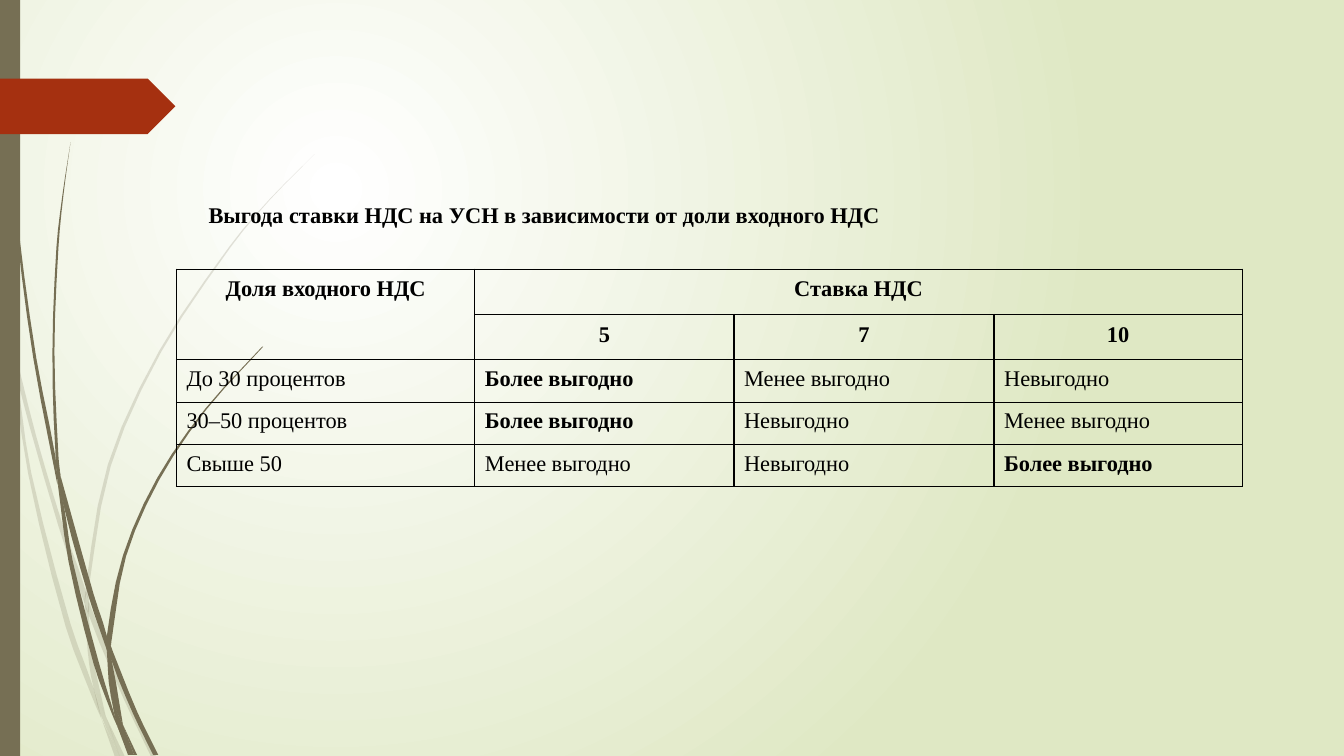
from dataclasses import dataclass

from lxml import etree
from pptx import Presentation
from pptx import slide as slides
from pptx import table as tables
from pptx import util as u
from pptx.dml import color, fill as fills
from pptx.enum import shapes, text
from pptx.oxml import ns
from pptx.text import text as frames

COLORS = {
    "white": "FFFFFF",
    "pale_green": "DFE8C4",
    "olive": "766F54",
    "rust": "A53010",
    "black": "000000",
}
FONT = "Times New Roman"
Knots = list[tuple[float, float]]


@dataclass(frozen=True)
class Blade:
    left: Knots
    right: Knots


@dataclass(frozen=True)
class CellText:
    words: str
    bold: bool = False
    header: bool = False


FAINT_BLADES = [
    Blade([(0, 2.82), (0, 2.99), (0.1, 3.44), (0.11, 3.5)], [(0, 2.82), (0.09, 3.22), (0.11, 3.5)]),
    Blade([(0.14, 3.45), (0.17, 3.76), (0.58, 5.22), (0.84, 5.99)],
          [(0.14, 3.45), (0.36, 4.33), (0.62, 5.2), (0.85, 5.86), (0.84, 5.99)]),
    Blade([(0.88, 5.96), (0.88, 6.1), (1.23, 6.94), (1.5, 7.51)],
          [(0.88, 5.96), (0.92, 6.07), (1.27, 6.92), (1.55, 7.51)]),
    Blade([(1.05, 7.11), (1.19, 7.51)], [(1.05, 7.11), (1.24, 7.51)]),
    Blade([(0.11, 3.5), (0.28, 4.7), (0.65, 6.21), (0.92, 6.93), (1.01, 7.14)],
          [(0.11, 3.5), (0.17, 3.76), (0.31, 4.69), (0.7, 6.19), (0.93, 6.83), (1.01, 7.14)]),
    Blade([(0.84, 5.99), (0.87, 6.46), (0.93, 6.83), (1.05, 7.11)],
          [(0.84, 5.99), (0.88, 6.1), (0.91, 6.46), (1.05, 7.11)]),
    Blade([(3.12, 1.53), (2.68, 1.97), (2.28, 2.44), (1.58, 3.48), (1.07, 4.61), (0.85, 5.84), (0.88, 5.96)],
          [(3.12, 1.53), (2.68, 1.98), (2.29, 2.45), (1.6, 3.49), (1.1, 4.62), (0.88, 5.84), (0.88, 5.96)]),
    Blade([(1.01, 7.14), (1.14, 7.51)], [(1.01, 7.14), (1.19, 7.51)]),
    Blade([(0.85, 5.86), (0.84, 5.99), (0.88, 6.1)], [(0.85, 5.86), (0.88, 5.96), (0.88, 6.1)]),
    Blade([(0.93, 6.83), (0.99, 7.07), (1.19, 7.51)], [(0.93, 6.83), (0.96, 6.92), (1.05, 7.11), (1.19, 7.51)]),
]
SOLID_BLADES = [
    Blade([(0.03, 0), (0.07, 1.1), (0.17, 2.33), (0.33, 3.55), (0.57, 4.81)],
          [(0.04, 0), (0.08, 1.09), (0.19, 2.32), (0.36, 3.55), (0.55, 4.53), (0.57, 4.81)]),
    Blade([(0.6, 4.72), (0.64, 5.05), (0.88, 5.92), (1.06, 6.45)],
          [(0.6, 4.72), (0.93, 5.9), (1.06, 6.31), (1.06, 6.45)]),
    Blade([(1.1, 6.41), (1.11, 6.56), (1.32, 7.08), (1.52, 7.49)],
          [(1.1, 6.41), (1.13, 6.49), (1.36, 7.06), (1.57, 7.49)]),
    Blade([(0.57, 4.77), (0.68, 5.57), (0.93, 6.59), (1.11, 7.08), (1.17, 7.22)],
          [(0.57, 4.77), (0.64, 5.05), (0.72, 5.56), (0.98, 6.57), (1.16, 7.17), (1.17, 7.22)]),
    Blade([(0.7, 1.41), (0.62, 1.93), (0.56, 2.45), (0.52, 3.49), (0.55, 4.49), (0.6, 4.72)],
          [(0.7, 1.41), (0.63, 1.93), (0.58, 2.45), (0.54, 3.49), (0.58, 4.53), (0.6, 4.72)]),
    Blade([(1.22, 7.19), (1.33, 7.49)], [(1.22, 7.19), (1.36, 7.49)]),
    Blade([(0.55, 4.49), (0.57, 4.77), (0.64, 5.05)], [(0.55, 4.49), (0.6, 4.72), (0.64, 5.05)]),
    Blade([(2.6, 3.44), (2.04, 4.05), (1.56, 4.74), (1.22, 5.51), (1.06, 6.31), (1.1, 6.41)],
          [(2.61, 3.44), (2.05, 4.06), (1.58, 4.76), (1.25, 5.52), (1.11, 6.33), (1.1, 6.41)]),
    Blade([(1.17, 7.22), (1.27, 7.49)], [(1.17, 7.22), (1.31, 7.49)]),
    Blade([(1.06, 6.45), (1.1, 6.91), (1.22, 7.19)], [(1.06, 6.45), (1.11, 6.56), (1.22, 7.19)]),
    Blade([(1.06, 6.31), (1.06, 6.45), (1.11, 6.56)], [(1.06, 6.31), (1.1, 6.41), (1.11, 6.56)]),
    Blade([(1.1, 6.91), (1.17, 7.22), (1.3, 7.49)], [(1.1, 6.91), (1.16, 7.06), (1.22, 7.19), (1.33, 7.49)]),
]

COLUMN_WIDTHS = [2.96, 2.57, 2.58, 2.46]
ROW_HEIGHTS = [0.45, 0.45, 0.42, 0.42, 0.42]
BEST = CellText("Более выгодно", bold=True)
WORSE = CellText("Менее выгодно")
POOR = CellText("Невыгодно")
SHARE = CellText("Доля входного НДС", bold=True, header=True)
RATE = CellText("Ставка НДС", bold=True, header=True)
ROWS = [
    [SHARE, RATE, None, None],
    [None] + [CellText(rate, bold=True, header=True) for rate in ("5", "7", "10")],
    [CellText("До 30 процентов"), BEST, WORSE, POOR],
    [CellText("30–50 процентов"), BEST, POOR, WORSE],
    [CellText("Свыше 50"), WORSE, POOR, BEST],
]


def rgb(name: str) -> color.RGBColor:
    return color.RGBColor.from_string(COLORS[name])


def paint_background(slide: slides.Slide) -> None:
    fill = slide.background.fill
    fill.gradient()
    for stop, position, name in zip(fill.gradient_stops, (0, 1), ("white", "pale_green")):
        stop.position = position
        stop.color.rgb = rgb(name)
    gradient = slide.element.find(".//" + ns.qn("a:gradFill"))
    gradient.remove(gradient.find(ns.qn("a:lin")))
    circle = etree.SubElement(gradient, ns.qn("a:path"), path="circle")
    etree.SubElement(circle, ns.qn("a:fillToRect"), l="50000", t="50000", r="100000", b="100000")


def smooth_edge(knots: Knots, steps: int = 3) -> Knots:
    last = len(knots) - 1
    slopes = []
    for index in range(last + 1):
        (x0, y0), (x1, y1) = knots[max(index - 1, 0)], knots[min(index + 1, last)]
        slopes.append((x1 - x0) / (y1 - y0))
    points = [knots[0]]
    for index in range(last):
        (x0, y0), (x1, y1) = knots[index], knots[index + 1]
        height = y1 - y0
        for step in range(1, steps + 1):
            t = step / steps
            x = (x0 * (1 + 2 * t) * (1 - t) ** 2 + x1 * t * t * (3 - 2 * t)
                 + height * (slopes[index] * t * (1 - t) ** 2 - slopes[index + 1] * t * t * (1 - t)))
            points.append((x, y0 + height * t))
    return points


def flat_fill(shape, name: str) -> None:
    shape.shadow.inherit = False
    shape.line.fill.background()
    fill: fills.FillFormat = shape.fill
    fill.solid()
    fill.fore_color.rgb = rgb(name)


def draw_blade(slide: slides.Slide, blade: Blade, opacity: int) -> None:
    edges = smooth_edge(blade.left) + smooth_edge(blade.right)[::-1]
    outline = [(u.Inches(x), u.Inches(y)) for x, y in edges]
    builder = slide.shapes.build_freeform(*outline[0])
    builder.add_line_segments(outline[1:], close=True)
    shape = builder.convert_to_shape()
    flat_fill(shape, "olive")
    if opacity < 100:
        solid = shape.element.spPr.find(".//" + ns.qn("a:srgbClr"))
        etree.SubElement(solid, ns.qn("a:alpha"), val=str(opacity * 1000))


def draw_block(slide: slides.Slide, kind: shapes.MSO_SHAPE, top: float,
               width: float, height: float, name: str) -> None:
    flat_fill(slide.shapes.add_shape(kind, 0, u.Inches(top), u.Inches(width), u.Inches(height)), name)


def write(frame: frames.TextFrame, words: str, bold: bool, spacing: float) -> None:
    paragraph = frame.paragraphs[0]
    paragraph.text = words
    paragraph.line_spacing = spacing
    paragraph.space_after = u.Pt(8)
    paragraph.font.name = FONT
    paragraph.font.size = u.Pt(16)
    paragraph.font.bold = bold
    paragraph.font.color.rgb = rgb("black")


def draw_title(slide: slides.Slide) -> None:
    box = slide.shapes.add_textbox(u.Inches(1.97), u.Inches(1.56), u.Inches(10.57), u.Inches(1.8))
    box.text_frame.word_wrap = True
    box.text_frame.margin_top = u.Inches(0.4)
    write(box.text_frame, "Выгода ставки НДС на УСН в зависимости от доли входного НДС", True, 1.15)


def style_cell(cell: tables._Cell, content: CellText | None) -> None:
    properties = cell._tc.get_or_add_tcPr()
    for side in ("lnL", "lnR", "lnT", "lnB"):
        border = etree.SubElement(properties, ns.qn(f"a:{side}"), w=str(u.Pt(1)))
        solid = etree.SubElement(border, ns.qn("a:solidFill"))
        etree.SubElement(solid, ns.qn("a:srgbClr"), val=COLORS["black"])
    cell.fill.background()
    if content is None:
        return
    horizontal, vertical = (0.06, 0.06) if content.header else (0.1, 0.05)
    cell.margin_left = cell.margin_right = u.Inches(horizontal)
    cell.margin_top = cell.margin_bottom = u.Inches(vertical)
    write(cell.text_frame, content.words, content.bold, 1.07)
    if content.header:
        cell.text_frame.paragraphs[0].alignment = text.PP_ALIGN.CENTER


def draw_rates_table(slide: slides.Slide) -> None:
    size = u.Inches(sum(COLUMN_WIDTHS)), u.Inches(sum(ROW_HEIGHTS))
    table = slide.shapes.add_table(len(ROWS), len(COLUMN_WIDTHS), u.Inches(1.75), u.Inches(2.67), *size).table
    table.first_row = table.horz_banding = False
    for column, width in zip(table.columns, COLUMN_WIDTHS):
        column.width = u.Inches(width)
    for row, height, contents in zip(table.rows, ROW_HEIGHTS, ROWS):
        row.height = u.Inches(height)
        for cell, content in zip(row.cells, contents):
            style_cell(cell, content)
    table.cell(0, 0).merge(table.cell(1, 0))
    table.cell(0, 1).merge(table.cell(0, 3))


def main() -> None:
    presentation = Presentation()
    presentation.slide_width, presentation.slide_height = u.Inches(13.33), u.Inches(7.5)
    slide = presentation.slides.add_slide(presentation.slide_layouts[6])
    paint_background(slide)
    for blades, opacity in ((FAINT_BLADES, 20), (SOLID_BLADES, 100)):
        for blade in blades:
            draw_blade(slide, blade, opacity)
    draw_block(slide, shapes.MSO_SHAPE.RECTANGLE, 0, 0.2, 7.5, "olive")
    draw_block(slide, shapes.MSO_SHAPE.PENTAGON, 0.78, 1.74, 0.55, "rust")
    draw_title(slide)
    draw_rates_table(slide)
    presentation.save("out.pptx")


if __name__ == "__main__":
    main()
